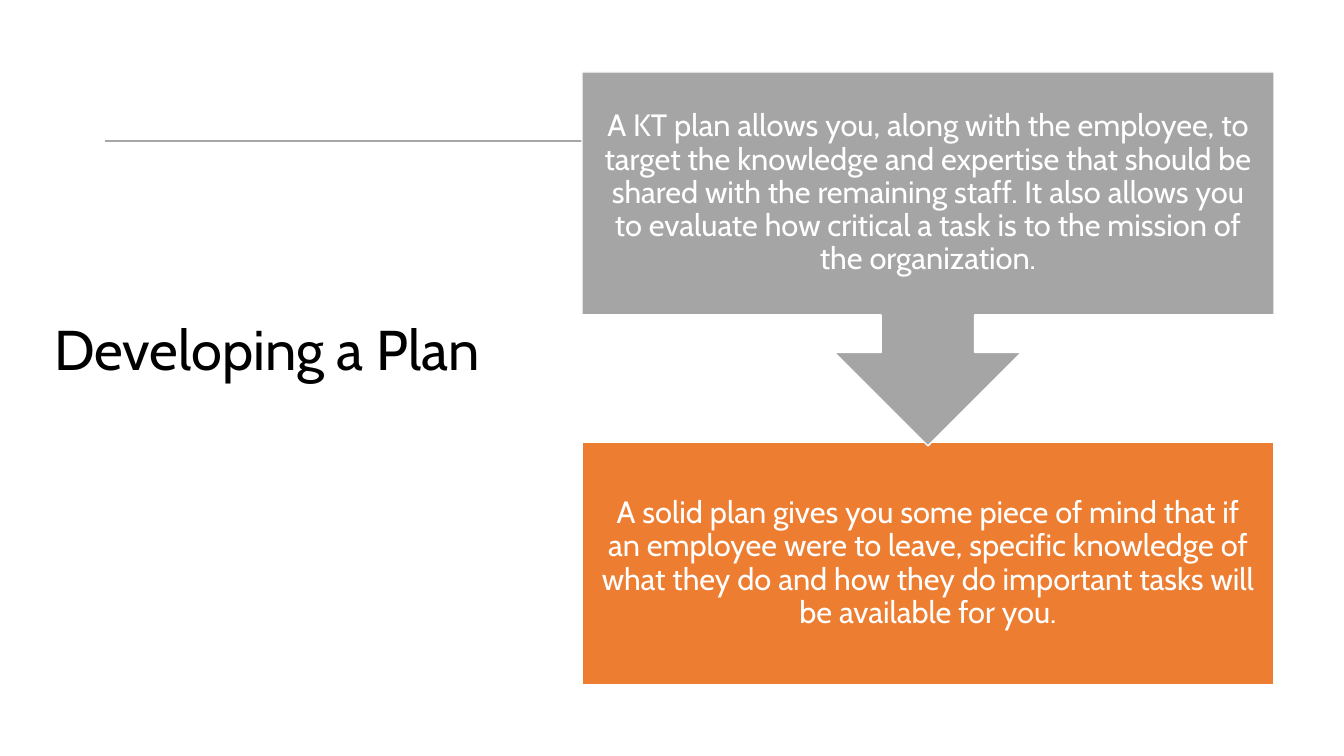
from dataclasses import dataclass

from lxml.etree import SubElement
from pptx import Presentation
from pptx.dml.color import RGBColor
from pptx.enum.shapes import MSO_CONNECTOR, MSO_SHAPE
from pptx.enum.text import MSO_ANCHOR, PP_ALIGN
from pptx.oxml.ns import qn
from pptx.util import Pt

# Content
HEADING = "Developing a Plan"
STEPS = [
    ("A KT plan allows you, along with the employee, to target the knowledge and "
     "expertise that should be shared with the remaining staff. It also allows you "
     "to evaluate how critical a task is to the mission of the organization."),
    ("A solid plan gives you some piece of mind that if an employee were to leave, "
     "specific knowledge of what they do and how they do important tasks will be "
     "available for you."),
]


@dataclass(frozen=True)
class Theme:
    font: str = "Cabin"
    heading_size: int = 40
    step_size: int = 22
    line_spacing: float = 0.9
    ink: RGBColor = RGBColor(0, 0, 0)
    paper: RGBColor = RGBColor(255, 255, 255)
    rule: RGBColor = RGBColor(0xA6, 0xA6, 0xA6)
    first: RGBColor = RGBColor(0xA5, 0xA5, 0xA5)
    last: RGBColor = RGBColor(0xED, 0x7D, 0x31)


THEME = Theme()

# Layout in px
SLIDE_W, SLIDE_H = 1344, 756
STEP_X, STEP_Y, STEP_W, STEP_H = 582, 72, 692, 243
STEP_PITCH = 370
CALLOUT_H = 374
STEP_INSET = 17


def px(length):
    return round(length * 914400 / 100.8)


def write(shape, words, size, color, align):
    frame = shape.text_frame
    frame.word_wrap = True
    frame.vertical_anchor = MSO_ANCHOR.MIDDLE
    paragraph = frame.paragraphs[0]
    paragraph.text = words
    paragraph.alignment = align
    paragraph.line_spacing = THEME.line_spacing
    paragraph.font.name = THEME.font
    paragraph.font.size = Pt(size)
    paragraph.font.color.rgb = color
    return frame


def add_step(slide, index, words):
    is_last = index == len(STEPS) - 1
    preset = MSO_SHAPE.RECTANGLE if is_last else MSO_SHAPE.DOWN_ARROW_CALLOUT
    height = STEP_H if is_last else CALLOUT_H
    step = slide.shapes.add_shape(
        preset, px(STEP_X), px(STEP_Y + index * STEP_PITCH), px(STEP_W), px(height))
    step.shadow.inherit = False
    step.fill.solid()
    step.fill.fore_color.rgb = THEME.last if is_last else THEME.first
    step.line.color.rgb = THEME.paper
    step.line.width = Pt(1)
    frame = write(step, words, THEME.step_size, THEME.paper, PP_ALIGN.CENTER)
    frame.margin_left = frame.margin_right = px(STEP_INSET)
    frame.margin_top = frame.margin_bottom = px(STEP_INSET)


def main():
    deck = Presentation()
    deck.slide_width, deck.slide_height = px(SLIDE_W), px(SLIDE_H)
    slide = deck.slides.add_slide(deck.slide_layouts[5])

    # Rule running behind the steps
    rule = slide.shapes.add_connector(
        MSO_CONNECTOR.STRAIGHT, px(105), px(141), px(1248), px(141))
    rule.line.color.rgb = THEME.rule
    rule.line.width = Pt(1)
    SubElement(rule._element.spPr, qn("a:effectLst"))

    # Heading, raised above the middle by its bottom margin
    heading = slide.shapes.title
    heading.left, heading.top = px(44), px(79)
    heading.width, heading.height = px(509), px(607)
    frame = write(heading, HEADING, THEME.heading_size, THEME.ink, PP_ALIGN.LEFT)
    frame.margin_bottom = px(65)

    # Steps, drawn last to first so the arrow tip lies on top
    for index, words in reversed(list(enumerate(STEPS))):
        add_step(slide, index, words)

    deck.save("out.pptx")


if __name__ == "__main__":
    main()
